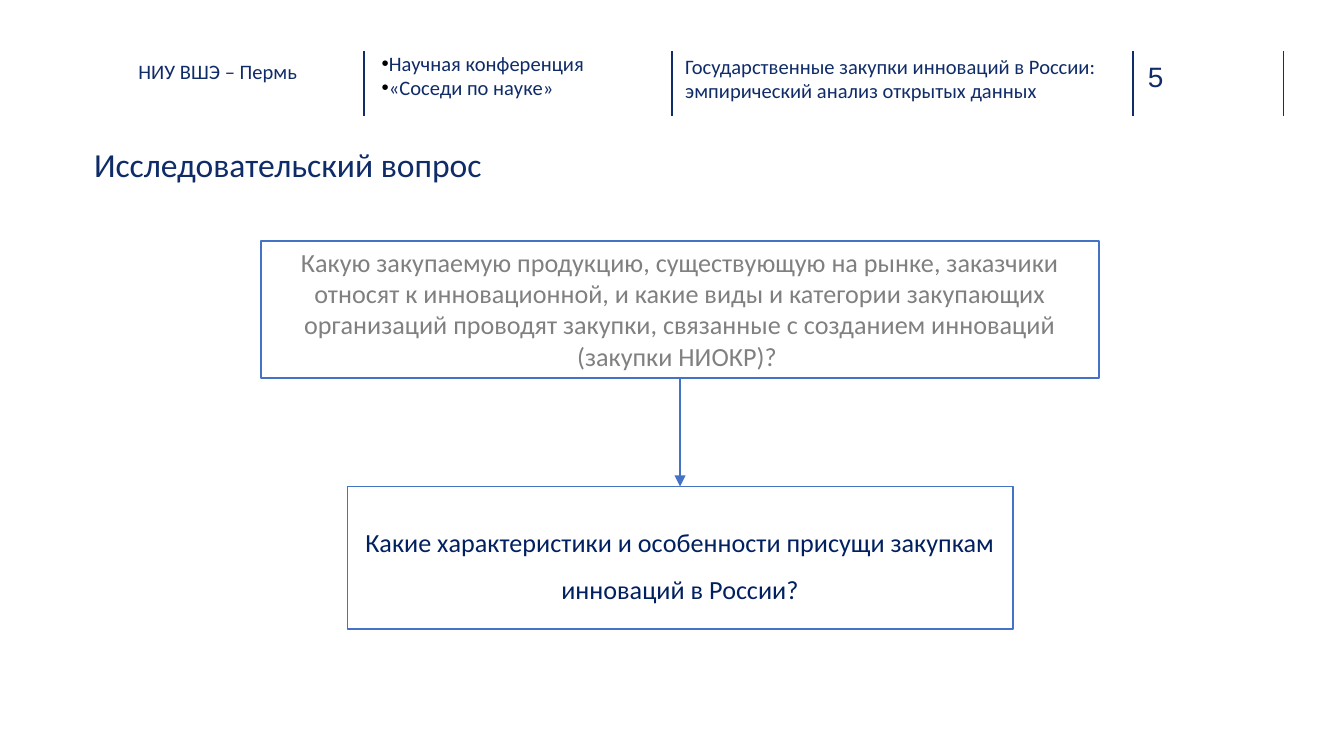
from lxml import etree
from pptx import Presentation
from pptx.dml.color import RGBColor as RGB
from pptx.enum.shapes import MSO_CONNECTOR as Conn, MSO_SHAPE as Shape
from pptx.enum.text import MSO_ANCHOR as Anchor, PP_ALIGN as Align
from pptx.oxml.ns import qn
from pptx.util import Inches, Pt

HUE = {"navy": "102D69", "text": "0F2C68", "blue": "4472C4", "gray": "808080",
       "deep": "002060", "white": "FFFFFF", "black": "000000"}

BARS = [2.71, 5, 8.43, 9.55]
TOP, END = 0.38, 0.86

NOTES = [
    dict(at=(8.54, 0.44, 0.55, 0.25), lines=["5"], size=15, face="Arial", hue="navy"),
    dict(at=(0.7, 1.07, 4.3, 0.64), lines=["Исследовательский вопрос"], size=18),
    dict(at=(2.77, 0.36, 2.07, 0.45), pad=(0.07, 0.04), dots=True,
         lines=["Научная конференция", "«Соседи по науке»"]),
    dict(at=(5, 0.35, 3.35, 0.47), pad=(0.1, 0.05),
         lines=["Государственные закупки инноваций в России:",
                "эмпирический анализ открытых данных"]),
    dict(at=(1.03, 0.44, 1.3, 0.38), lines=["НИУ ВШЭ – Пермь"]),
]

MID = 5.06
BOXES = [
    dict(top=1.79, wide=6.23, high=1.02, hue="gray", anchor=Anchor.TOP, gap=1,
         text="Какую закупаемую продукцию, существующую на рынке, заказчики "
              "относят к инновационной, и какие виды и категории закупающих "
              "организаций проводят закупки, связанные с созданием инноваций "
              "(закупки НИОКР)? "),
    dict(top=3.62, wide=4.95, high=1.06, hue="deep", anchor=Anchor.MIDDLE, gap=1.5,
         text="Какие характеристики и особенности присущи закупкам "
              "инноваций в России?"),
]


def paint(name):
    return RGB.from_string(HUE[name])


def add_dot(par):
    props = par._p.get_or_add_pPr()
    props.set("marL", "0")
    props.set("indent", "0")
    tint = etree.SubElement(props, qn("a:buClr"))
    etree.SubElement(tint, qn("a:srgbClr")).set("val", HUE["black"])
    etree.SubElement(props, qn("a:buFont")).set("typeface", "Arial")
    etree.SubElement(props, qn("a:buChar")).set("char", "•")


def write(shape, lines, size=11, face="Calibri", hue="text", pad=(0, 0),
          dots=False, align=Align.LEFT, anchor=Anchor.TOP, gap=1):
    frame = shape.text_frame
    frame.text = "\n".join(lines)
    frame.word_wrap = True
    frame.vertical_anchor = anchor
    frame.margin_left = frame.margin_right = Inches(pad[0])
    frame.margin_top = frame.margin_bottom = Inches(pad[1])
    for num, par in enumerate(frame.paragraphs):
        par.alignment = align
        par.line_spacing = 0.9 if dots else gap
        if dots:
            if num:
                par.space_before = Pt(1)
            add_dot(par)
        for run in par.runs:
            run.font.size = Pt(size)
            run.font.name = face
            run.font.color.rgb = paint(hue)


def add_line(slide, start, end, hue, width):
    line = slide.shapes.add_connector(Conn.STRAIGHT, *map(Inches, start + end))
    line.line.color.rgb = paint(hue)
    line.line.width = Pt(width)
    etree.SubElement(line._element.spPr, qn("a:effectLst"))
    return line


def add_box(slide, top, wide, high, text, **style):
    left = MID - wide / 2
    box = slide.shapes.add_shape(Shape.RECTANGLE, *map(Inches, (left, top, wide, high)))
    box.shadow.inherit = False
    box.fill.solid()
    box.fill.fore_color.rgb = paint("white")
    box.line.color.rgb = paint("blue")
    box.line.width = Pt(1)
    write(box, [text], size=14, pad=(0.07, 0.04), align=Align.CENTER, **style)


def main():
    deck = Presentation()
    deck.slide_width = Inches(10)
    deck.slide_height = deck.slide_width * 9 // 16
    slide = deck.slides.add_slide(deck.slide_layouts[6])
    for x in BARS:
        add_line(slide, (x, TOP), (x, END), "navy", 1)
    for box in BOXES:
        add_box(slide, **box)
    first, last = BOXES
    arrow = add_line(slide, (MID, first["top"] + first["high"]),
                     (MID, last["top"]), "blue", 0.75)
    etree.SubElement(arrow.line._get_or_add_ln(), qn("a:tailEnd")).set("type", "triangle")
    for note in NOTES:
        style = dict(note)
        place = map(Inches, style.pop("at"))
        write(slide.shapes.add_textbox(*place), **style)
    deck.save("out.pptx")


if __name__ == "__main__":
    main()
